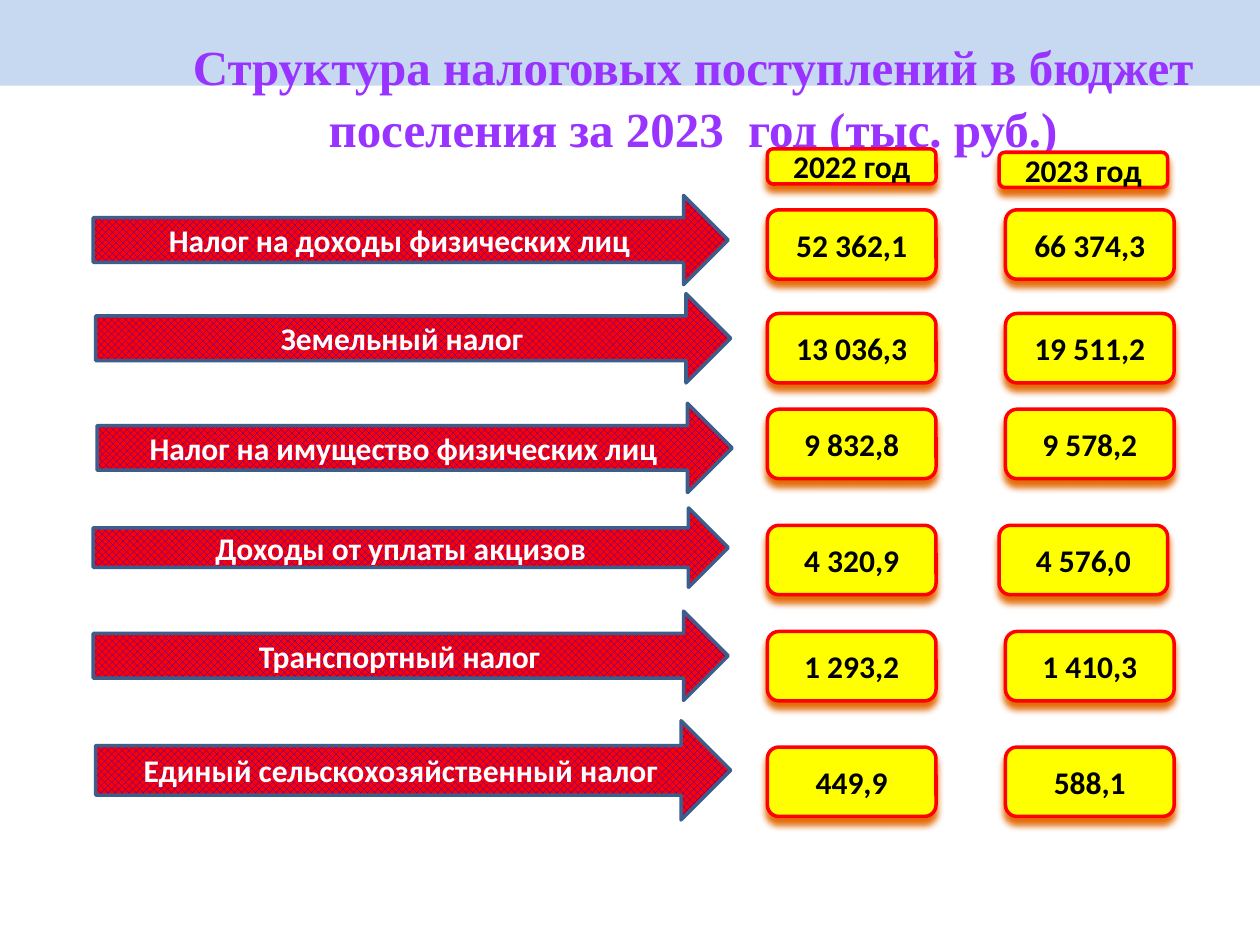
from typing import NamedTuple

from lxml.etree import SubElement
from pptx import Presentation
from pptx.dml.color import RGBColor
from pptx.enum.dml import MSO_PATTERN_TYPE as Pattern
from pptx.enum.shapes import MSO_SHAPE as Preset
from pptx.enum.text import MSO_ANCHOR as Anchor, PP_ALIGN as Align
from pptx.oxml.ns import qn
from pptx.shapes.autoshape import Shape
from pptx.slide import Slide
from pptx.util import Cm, Pt

ARROW_WIDTH = 12.8
BOX_WIDTH, BOX_HEIGHT, HEADER_HEIGHT = 3.4, 1.4, 0.71
COLUMN_2022, COLUMN_2023, COLUMN_2023_SHIFTED = 15.47, 20.27, 20.14


class Tax(NamedTuple):
    name: str
    left: float
    top: float
    value_2022: str
    value_2023: str
    box_top: float
    height: float = 1.8
    column_2023: float = COLUMN_2023


TAXES = [
    Tax("Налог на доходы физических лиц", 1.88, 3.94, "52 362,1", "66 374,3", 4.23),
    Tax("Земельный налог", 1.93, 5.92, "13 036,3", "19 511,2", 6.32),
    Tax("Налог на имущество физических лиц", 1.96, 8.13, "9 832,8", "9 578,2", 8.25),
    Tax("Доходы от уплаты акцизов", 1.88, 10.24, "4 320,9", "4 576,0", 10.59,
        height=1.6, column_2023=COLUMN_2023_SHIFTED),
    Tax("Транспортный налог", 1.88, 12.32, "1 293,2", "1 410,3", 12.73),
    Tax("Единый сельскохозяйственный налог", 1.93, 14.53, "449,9", "588,1", 15.06,
        height=2.0),
]


def color(value: str) -> RGBColor:
    return RGBColor.from_string(value)


def write(shape: Shape, text: str, size: float, font_name: str, font_color: str,
          anchor: Anchor) -> None:
    frame = shape.text_frame
    frame.word_wrap = True
    frame.vertical_anchor = anchor
    paragraph = frame.paragraphs[0]
    paragraph.text = text
    paragraph.alignment = Align.CENTER
    font = paragraph.font
    font.size, font.name, font.bold = Pt(size), font_name, True
    font.color.rgb = color(font_color)


def add_preset(slide: Slide, preset: Preset, left: float, top: float,
               width: float, height: float) -> Shape:
    shape = slide.shapes.add_shape(preset, Cm(left), Cm(top), Cm(width), Cm(height))
    shape.shadow.inherit = False
    return shape


def set_line(shape: Shape, line_color: str) -> None:
    shape.line.color.rgb = color(line_color)
    shape.line.width = Pt(2)


def add_glow_shadow(shape: Shape) -> None:
    """Put a soft orange shadow straight below the shape."""
    effects = shape._element.spPr.find(qn("a:effectLst"))
    shadow = SubElement(effects, qn("a:outerShdw"), blurRad=str(Pt(4)), dist=str(Pt(4)),
                        dir="5400000", rotWithShape="0")
    SubElement(shadow, qn("a:srgbClr"), val="E46C0A")


def add_band(slide: Slide) -> None:
    band = add_preset(slide, Preset.RECTANGLE, 0, 0, 25.4, 1.73)
    band.fill.solid()
    band.fill.fore_color.rgb = color("C6D9F1")
    band.line.fill.background()


def add_title(slide: Slide) -> None:
    title = slide.shapes.add_textbox(Cm(2.54), Cm(0.53), Cm(22.86), Cm(3.18))
    write(title, "Структура налоговых поступлений в бюджет поселения за 2023  год (тыс. руб.)",
          28, "Times New Roman", "9933FF", Anchor.TOP)
    title.text_frame.margin_top = Cm(0.15)
    title.text_frame.paragraphs[0].line_spacing = 1.05


def add_arrow(slide: Slide, tax: Tax) -> None:
    arrow = add_preset(slide, Preset.RIGHT_ARROW, tax.left, tax.top, ARROW_WIDTH, tax.height)
    arrow.fill.patterned()
    arrow.fill.pattern = Pattern.from_xml("openDmnd")
    arrow.fill.fore_color.rgb = color("0000FF")
    arrow.fill.back_color.rgb = color("FF0000")
    set_line(arrow, "3A5F8C")
    write(arrow, tax.name, 18, "Calibri", "FFFFFF", Anchor.MIDDLE)


def add_box(slide: Slide, text: str, left: float, top: float,
            height: float = BOX_HEIGHT) -> None:
    box = add_preset(slide, Preset.ROUNDED_RECTANGLE, left, top, BOX_WIDTH, height)
    box.fill.solid()
    box.fill.fore_color.rgb = color("FFFF00")
    set_line(box, "FF0000")
    add_glow_shadow(box)
    write(box, text, 18, "Calibri", "000000", Anchor.MIDDLE)


def main() -> None:
    presentation = Presentation()
    presentation.slide_width, presentation.slide_height = Cm(25.4), Cm(19.05)
    slide = presentation.slides.add_slide(presentation.slide_layouts[6])
    add_band(slide)
    add_title(slide)
    add_box(slide, "2022 год", COLUMN_2022, 3.0, HEADER_HEIGHT)
    add_box(slide, "2023 год", COLUMN_2023_SHIFTED, 3.07, HEADER_HEIGHT)
    for tax in TAXES:
        add_arrow(slide, tax)
        add_box(slide, tax.value_2022, COLUMN_2022, tax.box_top)
        add_box(slide, tax.value_2023, tax.column_2023, tax.box_top)
    presentation.save("out.pptx")


if __name__ == "__main__":
    main()
